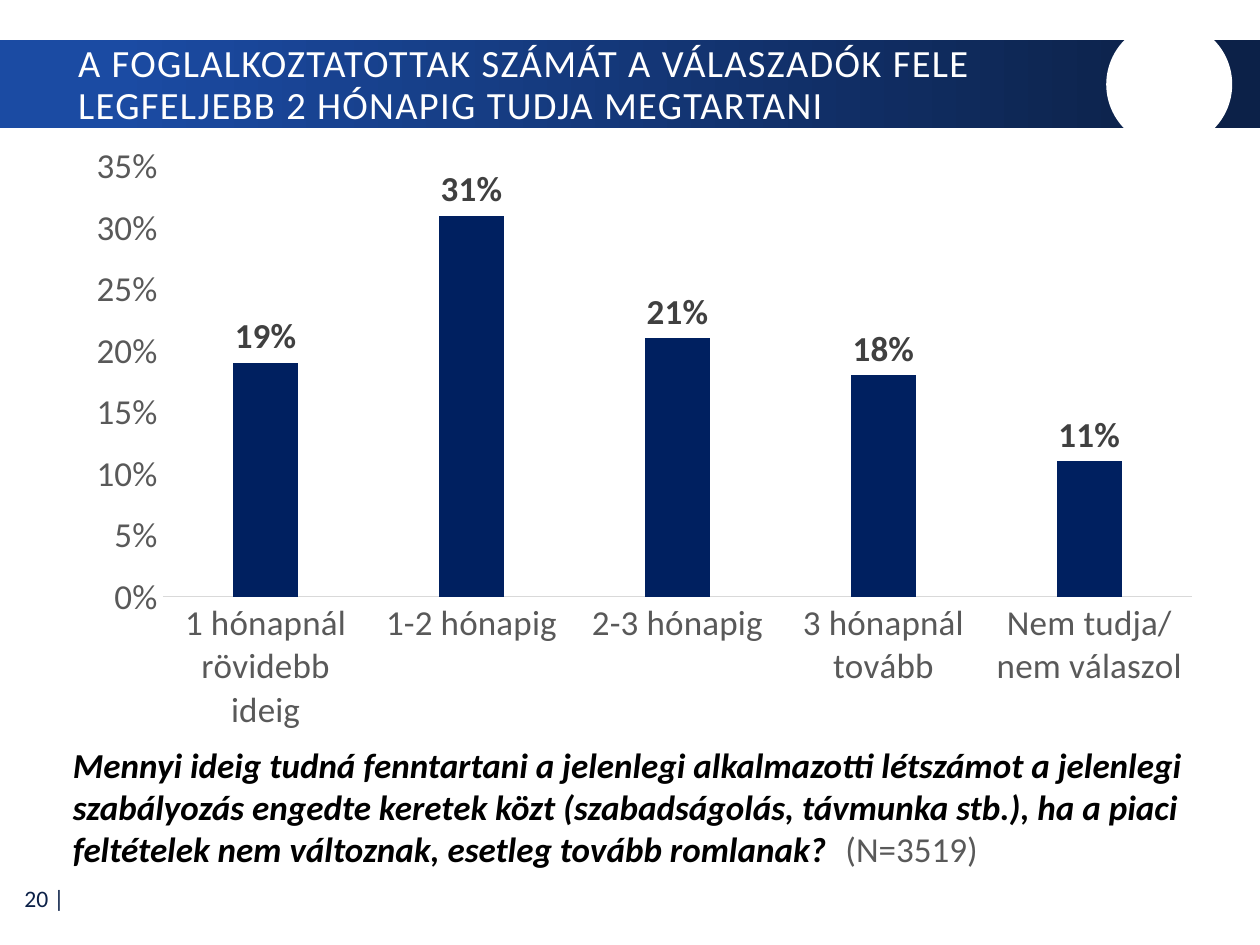
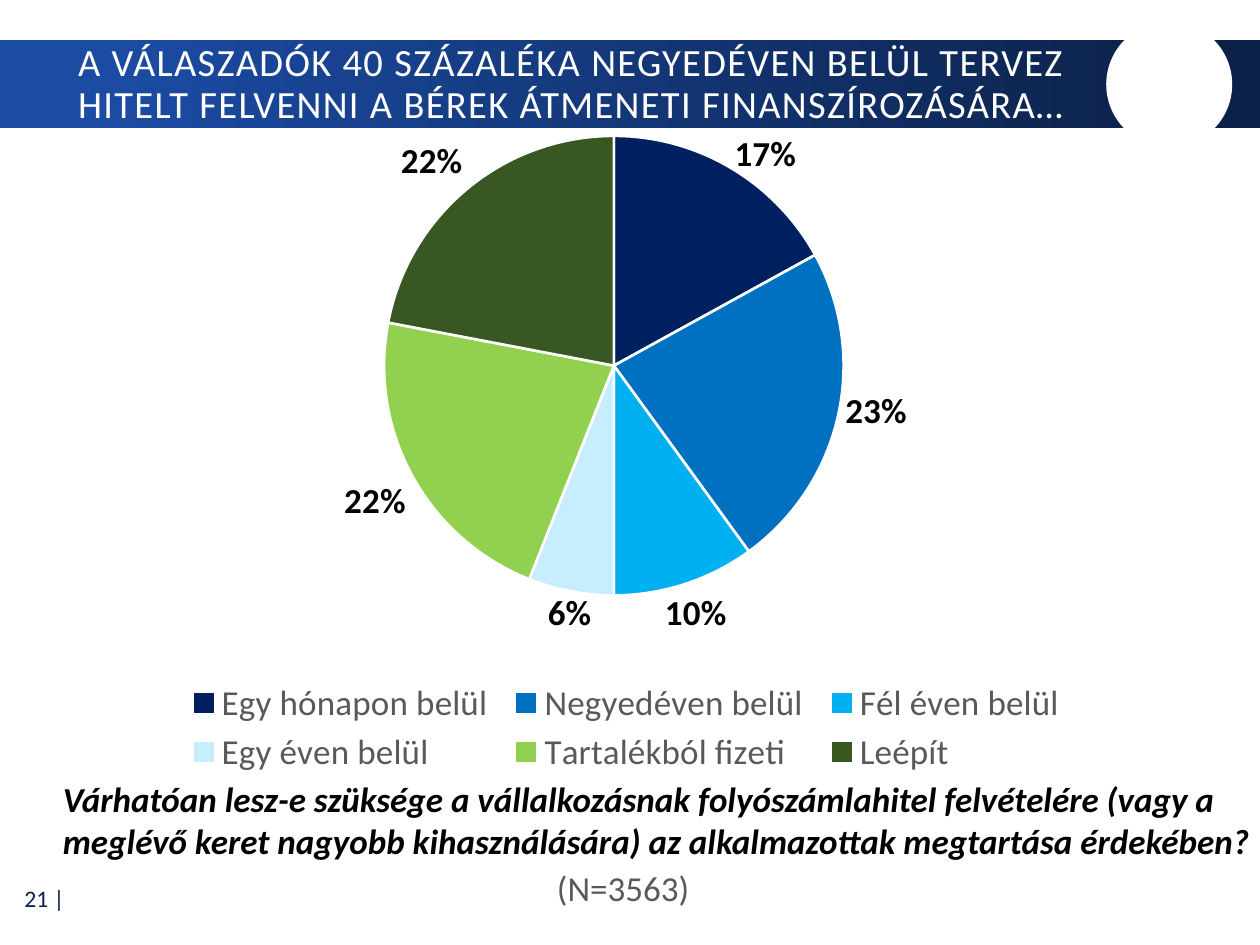
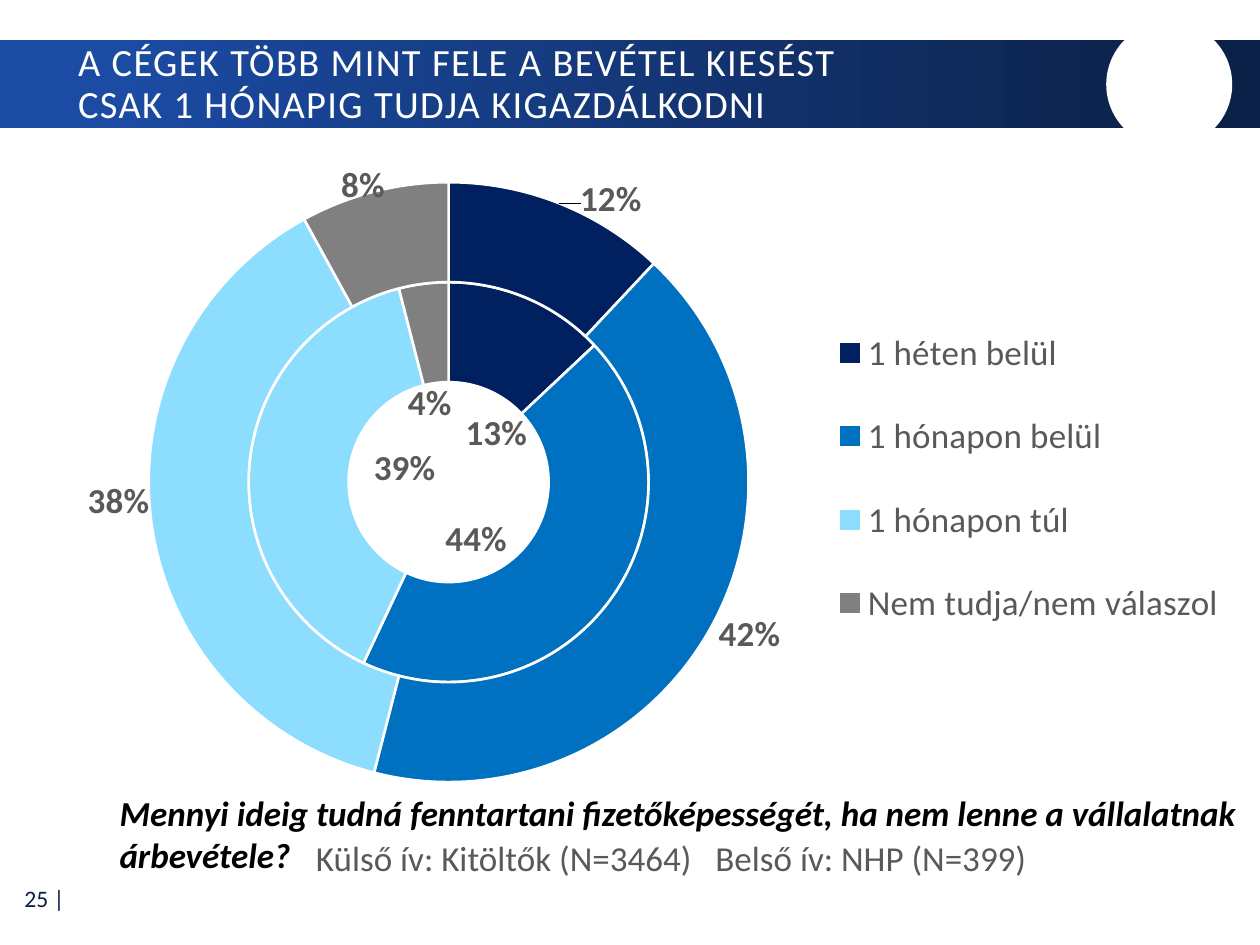
from copy import deepcopy

from lxml import etree
from pptx import Presentation
from pptx.chart.data import CategoryChartData
from pptx.dml.color import RGBColor
from pptx.enum.chart import XL_CHART_TYPE, XL_LABEL_POSITION, XL_LEGEND_POSITION, XL_TICK_MARK
from pptx.enum.shapes import MSO_SHAPE
from pptx.enum.text import MSO_ANCHOR, MSO_AUTO_SIZE, PP_ALIGN
from pptx.oxml.ns import qn
from pptx.util import Inches, Pt

COLUMN, PIE, DOUGHNUT = XL_CHART_TYPE.COLUMN_CLUSTERED, XL_CHART_TYPE.PIE, XL_CHART_TYPE.DOUGHNUT
OUTSIDE = XL_LABEL_POSITION.OUTSIDE_END
BOTTOM, RIGHT_SIDE = XL_LEGEND_POSITION.BOTTOM, XL_LEGEND_POSITION.RIGHT
NO_TICK = XL_TICK_MARK.NONE
LEFT, RIGHT = PP_ALIGN.LEFT, PP_ALIGN.RIGHT
TOP, MIDDLE = MSO_ANCHOR.TOP, MSO_ANCHOR.MIDDLE

FONT = "Calibri"
WHITE = RGBColor(0xFF, 0xFF, 0xFF)
BLACK = RGBColor(0, 0, 0)
BAND_BLUE = RGBColor(0x1B, 0x4B, 0xA3)
BAND_NAVY = RGBColor(0x0C, 0x21, 0x48)
GREY_TEXT = RGBColor(0x59, 0x59, 0x59)
LABEL_GREY = RGBColor(0x40, 0x40, 0x40)
AXIS_GREY = RGBColor(0xD9, 0xD9, 0xD9)
NAVY = RGBColor(0x00, 0x20, 0x60)
BLUE = RGBColor(0x00, 0x70, 0xC0)
SKY = RGBColor(0x00, 0xB0, 0xF0)
PALE = RGBColor(0xC6, 0xEE, 0xFF)
LIGHT_BLUE = RGBColor(0x8D, 0xDD, 0xFF)
GREEN = RGBColor(0x92, 0xD0, 0x50)
DARK_GREEN = RGBColor(0x38, 0x57, 0x23)
GREY = RGBColor(0x80, 0x80, 0x80)

# Content: boxes are left, top, width, height in inches; plot, legend and shifts are chart fractions
SLIDES = [
    dict(
        number=20, title_top=0.35,
        title="A FOGLALKOZTATOTTAK SZÁMÁT A VÁLASZADÓK FELE LEGFELJEBB 2 HÓNAPIG TUDJA MEGTARTANI",
        question="Mennyi ideig tudná fenntartani a jelenlegi alkalmazotti létszámot a jelenlegi "
                 "szabályozás engedte keretek közt (szabadságolás, távmunka stb.), ha a piaci "
                 "feltételek nem változnak, esetleg tovább romlanak?",
        question_box=(0.48, 5.85, 9.34, 1.11),
        sample="(N=3519)", sample_box=(6.59, 6.52, 1.27, 0.44),
        kind=COLUMN, chart_box=(0.52, 1.1, 9.08, 4.92), plot=(0.085, 0.045, 0.9, 0.694),
        cats=["1 hónapnál rövidebb ideig", "1-2 hónapig", "2-3 hónapig", "3 hónapnál tovább",
              "Nem tudja/nem válaszol"],
        series=[(0.19, 0.31, 0.21, 0.18, 0.11)], label_color=LABEL_GREY,
    ),
    dict(
        number=21, title_top=0.34,
        title="A VÁLASZADÓK 40 SZÁZALÉKA NEGYEDÉVEN BELÜL TERVEZ HITELT FELVENNI A BÉREK "
              "ÁTMENETI FINANSZÍROZÁSÁRA…",
        question="Várhatóan lesz-e szüksége a vállalkozásnak folyószámlahitel felvételére (vagy a "
                 "meglévő keret nagyobb kihasználására) az alkalmazottak megtartása érdekében?",
        question_box=(0.4, 6.12, 9.82, 0.77),
        sample="(N=3563)", sample_box=(4.3, 6.83, 1.27, 0.44),
        kind=PIE, chart_box=(0.52, 0.67, 8.81, 5.52), plot=(0.287, 0.074, 0.414, 0.661),
        legend=BOTTOM, legend_box=(0.1, 0.85, 0.81, 0.15),
        cats=["Egy hónapon belül", "Negyedéven belül", "Fél éven belül", "Egy éven belül",
              "Tartalékból fizeti", "Leépít"],
        series=[(17, 23, 10, 6, 22, 22)], label_color=BLACK,
        colors=[NAVY, BLUE, SKY, PALE, GREEN, DARK_GREEN],
        shifts=[[(0, 0.02), (0, -0.04), (-0.02, 0), (0.02, -0.01)]],
    ),
    dict(
        number=25, title_top=0.34,
        title="A CÉGEK TÖBB MINT FELE A BEVÉTEL KIESÉST \nCSAK 1 HÓNAPIG TUDJA KIGAZDÁLKODNI",
        question="Mennyi ideig tudná fenntartani fizetőképességét, ha nem lenne a vállalatnak "
                 "árbevétele?",
        question_box=(0.85, 6.23, 9.15, 0.77),
        sample="Külső ív: Kitöltők (N=3464)\tBelső ív: NHP (N=399)",
        sample_box=(2.41, 6.59, 5.84, 0.44), tab=3.17,
        kind=DOUGHNUT, chart_box=(0.52, 1.3, 9.3, 5.04), plot=(0.071, 0.029, 0.512, 0.945),
        legend=RIGHT_SIDE, legend_box=(0.652, 0.2, 0.34, 0.59),
        cats=["1 héten belül", "1 hónapon belül", "1 hónapon túl", "Nem tudja/nem válaszol"],
        series=[(13, 44, 39, 4), (12, 42, 38, 8)], label_color=GREY_TEXT,
        colors=[NAVY, BLUE, LIGHT_BLUE, GREY],
        # Inner ring labels go into the hole, outer ring labels outside the ring
        shifts=[[(-0.01, 0.14), (-0.08, -0.05), (0.09, 0), (0, 0.11)],
                [(0.06, -0.08), (0.07, 0.05), (-0.07, -0.02), (-0.02, -0.1)]],
    ),
]


def style_font(font, size, color, bold=False, italic=False):
    font.name, font.size, font.bold, font.italic = FONT, Pt(size), bold, italic
    font.color.rgb = color


def write(tf, text, size=20, color=GREY_TEXT, bold=False, italic=False, align=LEFT,
          anchor=TOP, line_spacing=None, spacing=None, tab=None):
    """Fill a text frame with one paragraph."""
    tf.word_wrap = True
    tf.auto_size = MSO_AUTO_SIZE.NONE
    tf.vertical_anchor = anchor
    p = tf.paragraphs[0]
    p.alignment = align
    if line_spacing:
        p.line_spacing = line_spacing
    if tab:
        tabs = etree.SubElement(p._p.get_or_add_pPr(), qn("a:tabLst"))
        etree.SubElement(tabs, qn("a:tab"), pos=str(Inches(tab)), algn="l")
    for i, line in enumerate(text.split("\n")):
        if i:
            p.add_line_break()
        r = p.add_run()
        r.text = line
        style_font(r.font, size, color, bold, italic)
        if spacing:
            r.font._element.set("spc", str(round(spacing * 100)))


def add_text(s, box, text, **fmt):
    write(s.shapes.add_textbox(*map(Inches, box)).text_frame, text, **fmt)


def add_shape(s, preset, *box):
    sp = s.shapes.add_shape(preset, *map(Inches, box))
    sp.shadow.inherit = False
    sp.line.fill.background()
    return sp


def add_frame(s, number, title, top):
    """Footer number, title band with its white disc, and the title."""
    add_text(s, (0.01, 6.94, 0.6, 0.37), f"{number} |", size=13.5, color=BAND_NAVY,
             align=RIGHT, anchor=MIDDLE)
    band = add_shape(s, MSO_SHAPE.RECTANGLE, 0, 0.32, 10, 0.7)
    band.fill.gradient()
    band.fill.gradient_angle = 0
    for stop, (pos, color) in zip(band.fill.gradient_stops, [(0.09, BAND_BLUE), (0.95, BAND_NAVY)]):
        stop.position, stop.color.rgb = pos, color
    disc = add_shape(s, MSO_SHAPE.OVAL, 8.78, 0.17, 1, 1)
    disc.fill.solid()
    disc.fill.fore_color.rgb = WHITE
    sp = s.shapes.title
    sp.left, sp.top, sp.width, sp.height = map(Inches, (0.52, top, 8.32, 0.67))
    write(sp.text_frame, title, size=22, color=WHITE, anchor=MIDDLE, line_spacing=0.9, spacing=0.8)
    s.shapes.element.append(sp.element)  # bring the title in front of the band


def make_layout(**values):
    layout = etree.Element(qn("c:layout"))
    manual = etree.SubElement(layout, qn("c:manualLayout"))
    for tag, val in values.items():
        etree.SubElement(manual, qn(f"c:{tag}"), val=str(val))
    return layout


def place(parent, index, box, **first):
    """Give a plot area or legend a fixed box."""
    for old in parent.findall(qn("c:layout")):
        parent.remove(old)
    x, y, w, h = box
    parent.insert(index, make_layout(**first, xMode="edge", yMode="edge", x=x, y=y, w=w, h=h))


def shift_labels(d_lbls, shifts):
    shared = [e for e in d_lbls if e.tag != qn("c:showLeaderLines")]
    for i, (x, y) in enumerate(shifts):
        label = etree.Element(qn("c:dLbl"))
        etree.SubElement(label, qn("c:idx"), val=str(i))
        label.append(make_layout(x=x, y=y))
        label.extend(deepcopy(e) for e in shared)
        d_lbls.insert(i, label)


def style_axes(chart, plot):
    plot.gap_width, plot.overlap = 219, -27
    cat, val = chart.category_axis, chart.value_axis
    for axis in (cat, val):
        axis.major_tick_mark = axis.minor_tick_mark = NO_TICK
        axis.has_major_gridlines = False
        style_font(axis.tick_labels.font, 20, GREY_TEXT)
    cat.format.line.color.rgb = AXIS_GREY
    cat.format.line.width = Pt(0.75)
    val.format.line.fill.background()
    val.minimum_scale, val.maximum_scale, val.major_unit = 0, 0.35, 0.05
    val.tick_labels.number_format = "0%"
    val.tick_labels.number_format_is_linked = False


def add_survey_chart(s, d):
    data = CategoryChartData()
    data.categories = d["cats"]
    for n, values in enumerate(d["series"], 1):
        data.add_series(f"Series {n}", values)
    kind = d["kind"]
    chart = s.shapes.add_chart(kind, *map(Inches, d["chart_box"]), data).chart
    chart.has_title = False
    style_font(chart.font, 10, BLACK)
    plot = chart.plots[0]
    plot.vary_by_categories = kind != COLUMN
    place(chart.element.xpath("//c:plotArea")[0], 0, d["plot"], layoutTarget="inner")

    # Legend
    chart.has_legend = "legend" in d
    if chart.has_legend:
        chart.legend.position = d["legend"]
        chart.legend.include_in_layout = False
        style_font(chart.legend.font, 20, GREY_TEXT)
        place(chart.element.xpath("//c:legend")[0], 1, d["legend_box"])

    # Series colours and labels
    for series in plot.series:
        labels = series.data_labels
        labels.show_value = kind == COLUMN
        labels.show_percentage = kind != COLUMN
        labels.number_format, labels.number_format_is_linked = "0%", False
        style_font(labels.font, 20, d["label_color"], bold=True)
        if kind != DOUGHNUT:
            labels.position = OUTSIDE
        if kind == COLUMN:
            series.format.fill.solid()
            series.format.fill.fore_color.rgb = NAVY
        for i, color in enumerate(d.get("colors", [])):
            fmt = series.points[i].format
            fmt.fill.solid()
            fmt.fill.fore_color.rgb = color
            fmt.line.color.rgb = WHITE
            fmt.line.width = Pt(1.5)
    for d_lbls, shifts in zip(chart.element.xpath("//c:ser/c:dLbls"), d.get("shifts", [])):
        shift_labels(d_lbls, shifts)

    if kind == COLUMN:
        style_axes(chart, plot)
    if kind == DOUGHNUT:
        chart.element.xpath("//c:holeSize")[0].set("val", "75")


def main():
    prs = Presentation()
    prs.slide_width, prs.slide_height = Inches(10), Inches(7.5)
    for d in SLIDES:
        s = prs.slides.add_slide(prs.slide_layouts[5])
        add_frame(s, d["number"], d["title"], d["title_top"])
        add_survey_chart(s, d)
        add_text(s, d["question_box"], d["question"], color=BLACK, bold=True, italic=True)
        tab = d.get("tab")
        add_text(s, d["sample_box"], d["sample"], align=LEFT if tab else RIGHT, tab=tab)
    prs.save("out.pptx")


if __name__ == "__main__":
    main()
